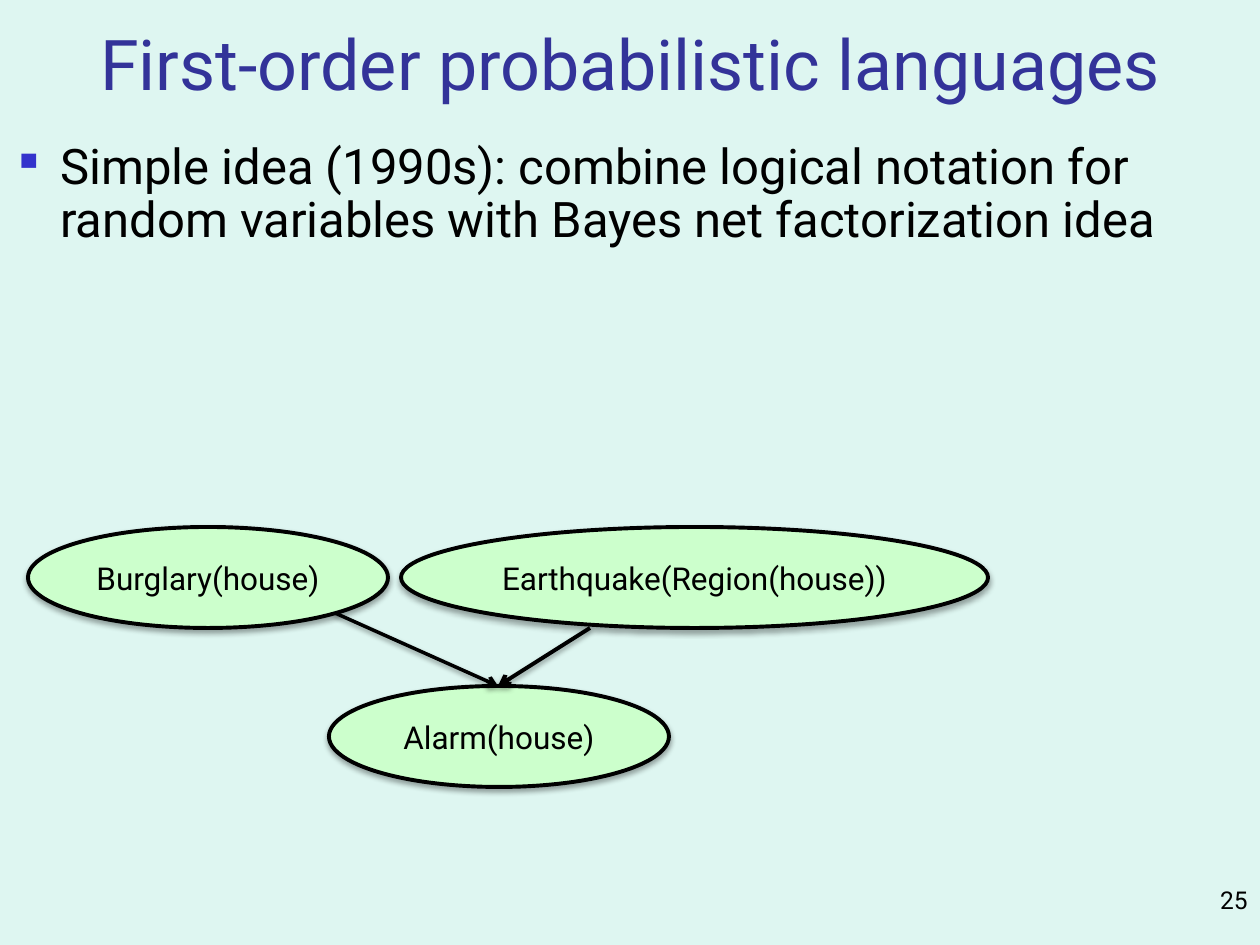
from lxml import etree
from pptx import Presentation
from pptx.dml.color import RGBColor
from pptx.enum.shapes import MSO_CONNECTOR as CONN, MSO_SHAPE as SHAPE
from pptx.enum.text import MSO_ANCHOR as ANCHOR, PP_ALIGN as ALIGN
from pptx.oxml import parse_xml
from pptx.oxml.ns import nsdecls, qn
from pptx.util import Pt

PX = 914400 / 126
W, H = 1260, 945
FONT = "Roboto"
BLACK = RGBColor(0x00, 0x00, 0x00)
INDIGO = RGBColor(0x33, 0x33, 0x99)
BLUE = RGBColor(0x33, 0x33, 0xCC)
GREEN = RGBColor(0xCC, 0xFF, 0xCC)
MINT = RGBColor(0xDE, 0xF6, 0xF1)


def px(*lengths):
    return [round(n * PX) for n in lengths]


def write(sp, text, size, color=BLACK, align=ALIGN.LEFT, anchor=ANCHOR.TOP):
    tf = sp.text_frame
    tf.word_wrap = True
    tf.vertical_anchor = anchor
    p = tf.paragraphs[0]
    p.alignment = align
    r = p.add_run()
    r.text = text
    r.font.name, r.font.size = FONT, Pt(size)
    r.font.color.rgb = color
    return p


def text_box(s, box, text, size, **fmt):
    return write(s.shapes.add_textbox(*px(*box)), text, size, **fmt)


def add_shadow(sp, dist, alpha):
    pr = sp._element.spPr
    for old in pr.findall(qn("a:effectLst")):
        pr.remove(old)
    pr.append(parse_xml(
        f'<a:effectLst {nsdecls("a")}><a:outerShdw blurRad="{Pt(3.1)}" '
        f'dist="{Pt(dist)}" dir="5400000" rotWithShape="0">'
        f'<a:srgbClr val="{BLACK}"><a:alpha val="{alpha * 1000}"/></a:srgbClr>'
        '</a:outerShdw></a:effectLst>'))


def add_bullet(p, indent):
    p.line_spacing = 0.9
    pr = p._p.get_or_add_pPr()
    pr.set("marL", str(indent))
    pr.set("indent", str(-indent))
    before = etree.SubElement(pr, qn("a:spcBef"))
    etree.SubElement(before, qn("a:spcPct")).set("val", "20000")
    color = etree.SubElement(pr, qn("a:buClr"))
    etree.SubElement(color, qn("a:srgbClr")).set("val", str(BLUE))
    etree.SubElement(pr, qn("a:buSzPct")).set("val", "90000")
    etree.SubElement(pr, qn("a:buChar")).set("char", "▪")


def add_node(s, box, text):
    sp = s.shapes.add_shape(SHAPE.OVAL, *px(*box))
    sp.fill.solid()
    sp.fill.fore_color.rgb = GREEN
    sp.line.color.rgb, sp.line.width = BLACK, Pt(2.25)
    add_shadow(sp, 1.8, 35)
    write(sp, text, 18, align=ALIGN.CENTER, anchor=ANCHOR.MIDDLE)


def add_arrow(s, start, end, width):
    line = s.shapes.add_connector(CONN.STRAIGHT, *px(*start, *end))
    line.line.color.rgb, line.line.width = BLACK, Pt(width)
    etree.SubElement(line.line._get_or_add_ln(), qn("a:tailEnd")).set("type", "arrow")
    add_shadow(line, 1.6, 38)


def bayes_net(s, x, y):
    node_h, row = 101, 159
    nodes = [(0, 0, 360, "Burglary(house)"),
             (301, row, 340, "Alarm(house)"),
             (373, 0, 587, "Earthquake(Region(house))")]
    for left, top, w, text in nodes:
        add_node(s, (x + left, y + top, w, node_h), text)
    # Both causes point at the top of the alarm node
    alarm_top = (x + 470, y + row)
    for left, top, width in [(307, 86, 2), (562, node_h, 2.25)]:
        add_arrow(s, (x + left, y + top), alarm_top, width)


def main():
    prs = Presentation()
    prs.slide_width, prs.slide_height = px(W, H)
    s = prs.slides.add_slide(prs.slide_layouts[6])
    s.background.fill.solid()
    s.background.fill.fore_color.rgb = MINT

    # Page number, title and body
    text_box(s, (1155, 879, 105, 66), "25", 14, align=ALIGN.RIGHT)
    text_box(s, (0, 0, W, 126), "First-order probabilistic languages", 40,
             color=INDIGO, align=ALIGN.CENTER, anchor=ANCHOR.MIDDLE)
    body = text_box(s, (0, 136, W, 703),
                    "Simple idea (1990s): combine logical notation for random "
                    "variables with Bayes net factorization idea", 28)
    add_bullet(body, px(48)[0])

    # Network diagram
    bayes_net(s, 28, 527)
    prs.save("out.pptx")


if __name__ == "__main__":
    main()
